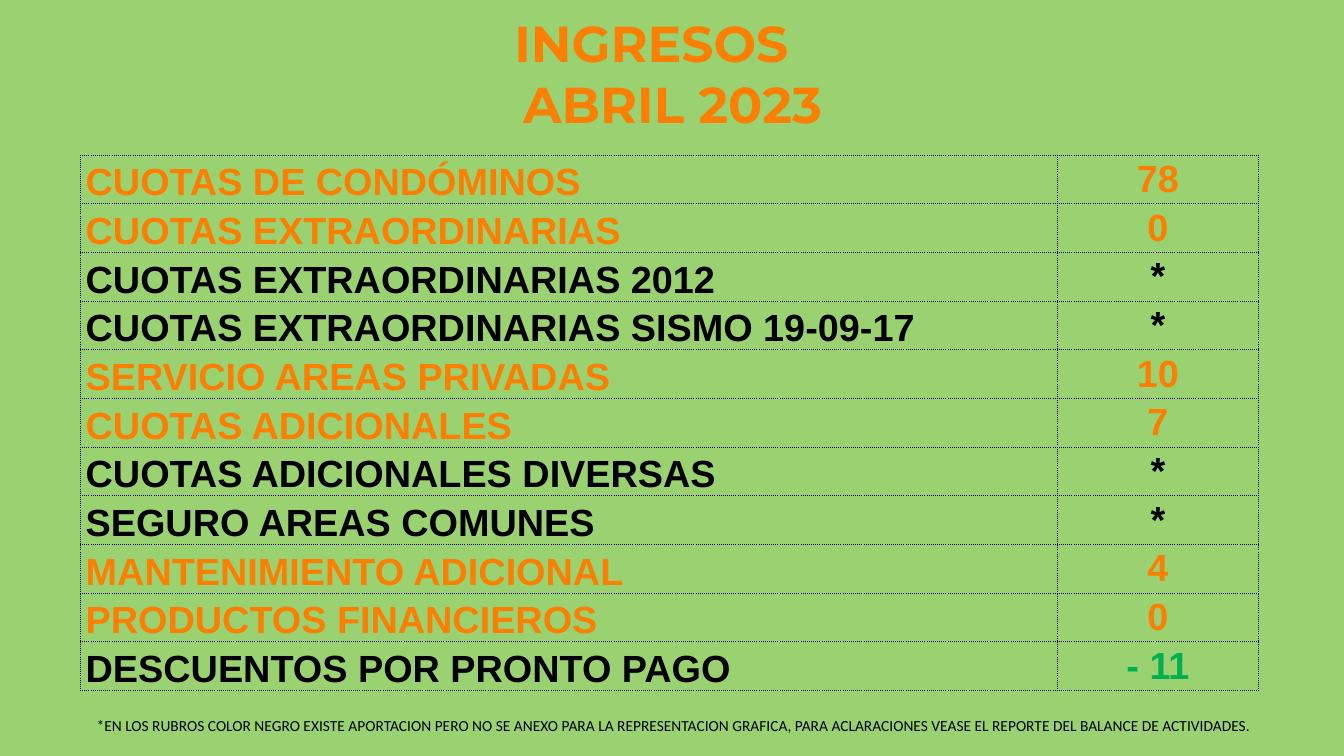
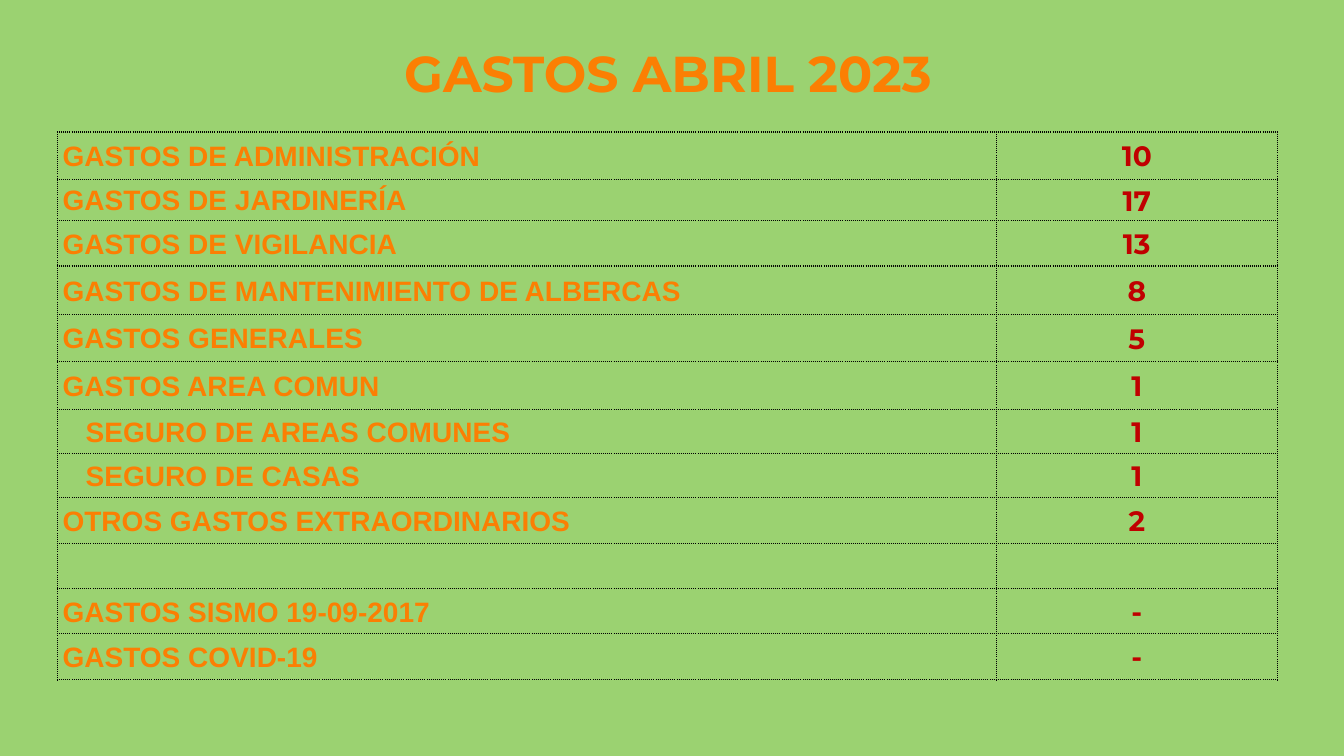
from pptx import Presentation
from pptx.dml.color import RGBColor
from pptx.enum.text import MSO_ANCHOR, MSO_AUTO_SIZE, PP_ALIGN
from pptx.oxml import parse_xml
from pptx.oxml.ns import nsdecls
from pptx.util import Inches, Pt

GREEN_BG = RGBColor(0x9B, 0xD2, 0x71)
ORANGE = RGBColor(0xFB, 0x7F, 0x03)
BLACK = RGBColor(0x00, 0x00, 0x00)
GREEN = RGBColor(0x00, 0xB0, 0x50)
RED = RGBColor(0xC0, 0x00, 0x00)

TITLE = dict(name="Montserrat", size=Pt(36), bold=True, color=ORANGE)
NOTE = dict(name="Calibri", size=Pt(11), bold=False, color=BLACK)
INCOME = dict(name="Arial", size=Pt(27), bold=True)
EXPENSE = dict(name="Arial", size=Pt(20), bold=True, color=ORANGE)
EXPENSE_VALUE = dict(EXPENSE, name="Montserrat", color=RED)

INCOME_ROWS = [
    ("CUOTAS DE CONDÓMINOS", "78", ORANGE, ORANGE),
    ("CUOTAS EXTRAORDINARIAS", "0", ORANGE, ORANGE),
    ("CUOTAS EXTRAORDINARIAS 2012", "*", BLACK, BLACK),
    ("CUOTAS EXTRAORDINARIAS SISMO 19-09-17", "*", BLACK, BLACK),
    ("SERVICIO AREAS PRIVADAS", "10", ORANGE, ORANGE),
    ("CUOTAS ADICIONALES", "7", ORANGE, ORANGE),
    ("CUOTAS ADICIONALES DIVERSAS", "*", BLACK, BLACK),
    ("SEGURO AREAS COMUNES", "*", BLACK, BLACK),
    ("MANTENIMIENTO ADICIONAL", "4", ORANGE, ORANGE),
    ("PRODUCTOS FINANCIEROS", "0", ORANGE, ORANGE),
    ("DESCUENTOS POR PRONTO PAGO", "- 11", BLACK, GREEN),
]
EXPENSE_ROWS = [
    ("GASTOS DE ADMINISTRACIÓN", "10", 0.47),
    ("GASTOS DE JARDINERÍA", "17", 0.41),
    ("GASTOS DE VIGILANCIA", "13", 0.45),
    ("GASTOS DE MANTENIMIENTO DE ALBERCAS", "8", 0.48),
    ("GASTOS GENERALES", "5", 0.47),
    ("GASTOS AREA COMUN", "1", 0.47),
    ("SEGURO DE AREAS COMUNES", "1", 0.44),
    ("SEGURO DE CASAS", "1", 0.44),
    ("OTROS GASTOS EXTRAORDINARIOS", "2", 0.45),
    ("", "", 0.45),
    ("GASTOS SISMO 19-09-2017", "-", 0.45),
    ("GASTOS COVID-19", "-", 0.45),
]
SUB_ITEMS = {"SEGURO DE AREAS COMUNES", "SEGURO DE CASAS"}


def set_attrs(obj, values):
    for key, value in values.items():
        setattr(obj, key, value)


def write(p, text, style, **para):
    set_attrs(p, para)
    r = p.add_run()
    r.text = text
    set_attrs(r.font, {k: v for k, v in style.items() if k != "color"})
    r.font.color.rgb = style["color"]


def place(sp, box):
    sp.left, sp.top, sp.width, sp.height = (Inches(v) for v in box)


def add_title(s, box, lines, step=0):
    sp = s.shapes.title
    place(sp, box)
    tf = sp.text_frame
    set_attrs(tf, dict(auto_size=MSO_AUTO_SIZE.NONE, word_wrap=True,
                       vertical_anchor=MSO_ANCHOR.MIDDLE))
    for i, line in enumerate(lines):
        p = tf.add_paragraph() if i else tf.paragraphs[0]
        pPr = p._p.get_or_add_pPr()
        pPr.set("marL", str(Inches(step * i)))
        pPr.set("indent", "0")
        write(p, line, TITLE, alignment=PP_ALIGN.CENTER)


def dot_borders(cell):
    tcPr = cell._tc.get_or_add_tcPr()
    for i, side in enumerate(("lnL", "lnR", "lnT", "lnB")):
        tcPr.insert(i, parse_xml(
            f'<a:{side} {nsdecls("a")} w="{Pt(1)}"><a:solidFill>'
            f'<a:srgbClr val="{BLACK}"/></a:solidFill>'
            f'<a:prstDash val="sysDot"/></a:{side}>'))


def fill_cell(cell, text, style, align, anchor, indent=0):
    set_attrs(cell, dict(margin_left=Inches(0.05 + indent), margin_right=Inches(0.05),
                         margin_top=0, margin_bottom=0, vertical_anchor=anchor))
    cell.fill.background()
    dot_borders(cell)
    if text:
        write(cell.text_frame.paragraphs[0], text, style,
              alignment=align, line_spacing=1.07)


def add_amounts(s, left, top, widths, rows, anchors):
    heights = [height for height, *_ in rows]
    box = (left, top, sum(widths), sum(heights))
    tbl = s.shapes.add_table(len(rows), 2, *(Inches(v) for v in box)).table
    set_attrs(tbl, dict(first_row=False, horz_banding=False))
    for col, width in zip(tbl.columns, widths):
        col.width = Inches(width)
    for row, (height, label, value) in zip(tbl.rows, rows):
        row.height = Inches(height)
        indent = 0.23 if label[0] in SUB_ITEMS else 0
        fill_cell(row.cells[0], *label, PP_ALIGN.LEFT, anchors[0], indent)
        fill_cell(row.cells[1], *value, PP_ALIGN.CENTER, anchors[1])


def add_note(s, box, text):
    sp = s.shapes.add_textbox(*(Inches(v) for v in box))
    sp.text_frame.word_wrap = True
    write(sp.text_frame.paragraphs[0], text, NOTE)


def income_slide(s):
    add_title(s, (4.46, 0.07, 4, 1.31), ["INGRESOS", "ABRIL 2023"], step=0.42)
    height = 5.31 / len(INCOME_ROWS)
    rows = [(height, (label, dict(INCOME, color=c1)), (value, dict(INCOME, color=c2)))
            for label, value, c1, c2 in INCOME_ROWS]
    add_amounts(s, 0.8, 1.54, (9.69, 1.99), rows, (MSO_ANCHOR.BOTTOM, MSO_ANCHOR.TOP))
    add_note(s, (0.86, 7.06, 12.22, 0.29),
             "*EN LOS RUBROS COLOR NEGRO EXISTE APORTACION PERO NO SE ANEXO PARA LA "
             "REPRESENTACION GRAFICA, PARA ACLARACIONES VEASE EL REPORTE DEL BALANCE "
             "DE ACTIVIDADES.")


def expense_slide(s):
    add_title(s, (3.42, 0.36, 6.41, 0.71), ["GASTOS ABRIL 2023"])
    rows = [(height, (label, EXPENSE), (value, EXPENSE_VALUE))
            for label, value, height in EXPENSE_ROWS]
    add_amounts(s, 0.57, 1.31, (9.31, 2.79), rows, (MSO_ANCHOR.MIDDLE,) * 2)


def main():
    prs = Presentation()
    prs.slide_width, prs.slide_height = Inches(13.33), Inches(7.5)
    fill = prs.slide_master.background.fill
    fill.solid()
    fill.fore_color.rgb = GREEN_BG
    for build in (income_slide, expense_slide):
        build(prs.slides.add_slide(prs.slide_layouts[5]))
    prs.save("out.pptx")


if __name__ == "__main__":
    main()
